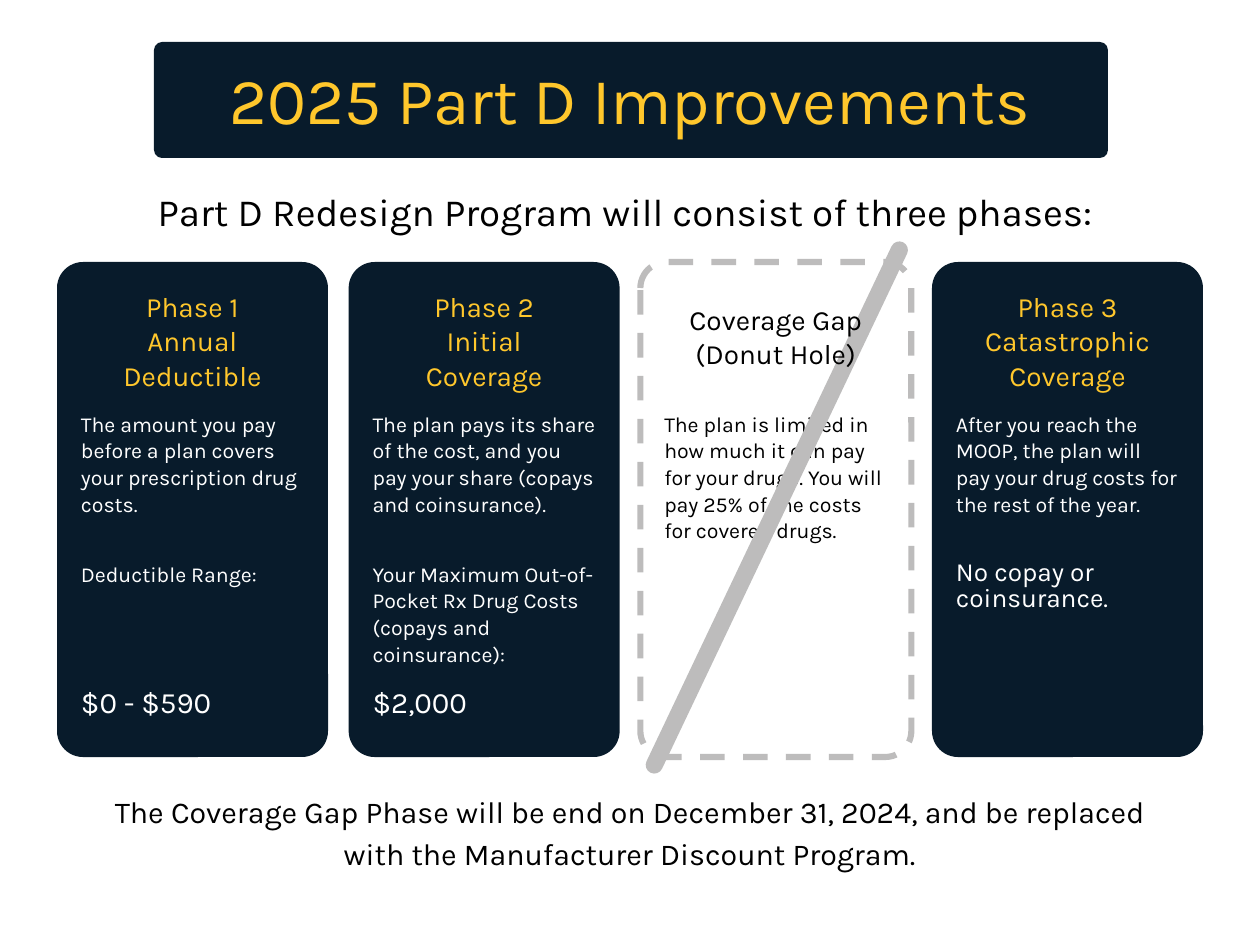
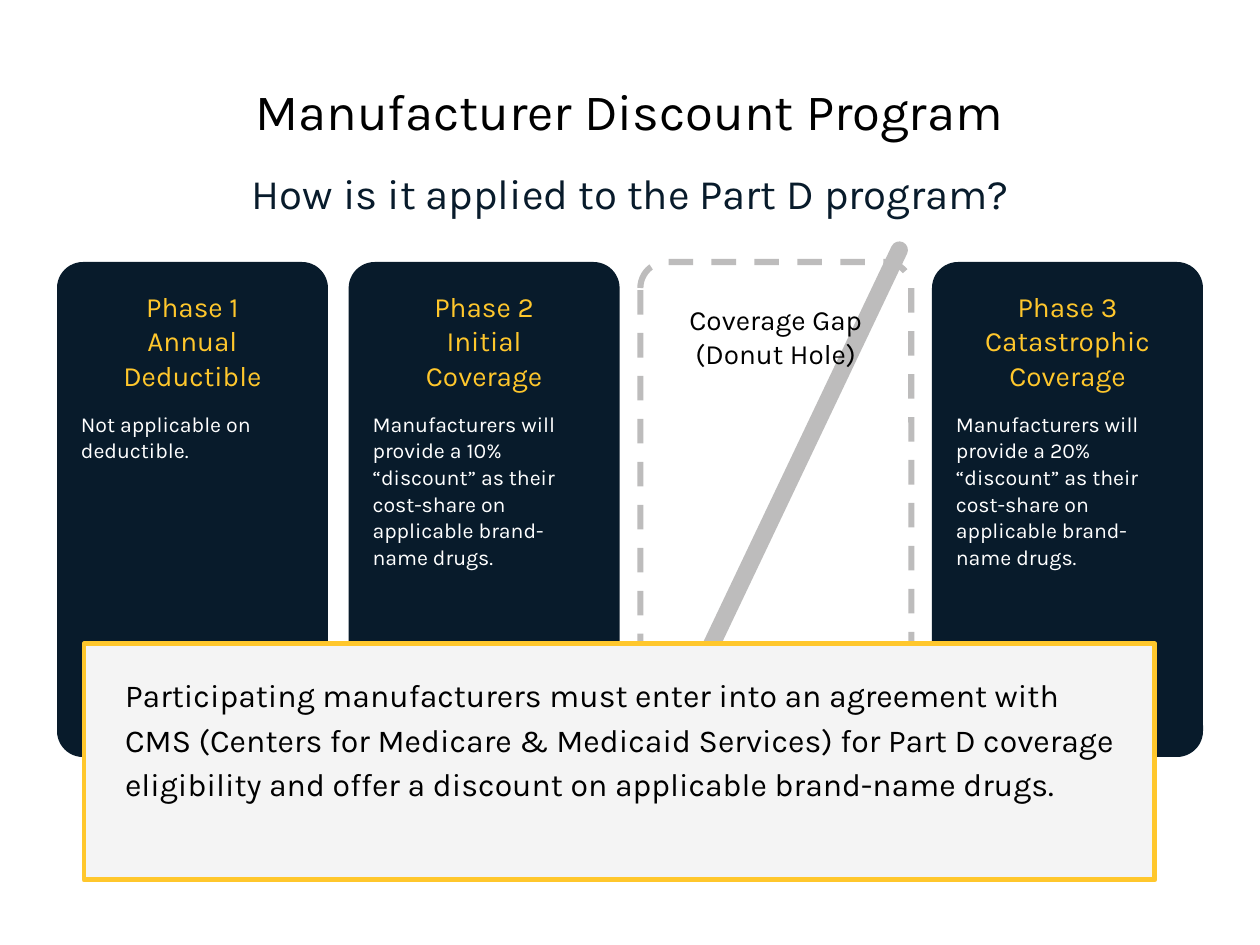
from dataclasses import dataclass

import pptx
import pptx.dml.color
import pptx.enum.dml
import pptx.enum.shapes
import pptx.enum.text
import pptx.oxml.ns
import pptx.util
from lxml import etree

SHAPE = pptx.enum.shapes.MSO_SHAPE
ALIGN = pptx.enum.text.PP_ALIGN


def px(length):
    return pptx.util.Emu(round(length * 7743))


def rgb(code):
    return pptx.dml.color.RGBColor.from_string(code)


@dataclass(frozen=True)
class Style:
    """Type size and exact line pitch in points, with colour and alignment."""
    size: float
    pitch: float
    color: str
    align: ALIGN = ALIGN.LEFT


class Theme:
    font = "Karla"
    navy, gold, gray, pale = "081B2B", "FFC72C", "BDBCBC", "F4F4F4"
    black, white = "000000", "FFFFFF"

    banner_title = Style(40, 56, gold, ALIGN.CENTER)
    plain_title = Style(31, 43.4, black, ALIGN.CENTER)
    intro = Style(23.5, 32.9, black, ALIGN.CENTER)
    question = Style(25.6, 32, navy, ALIGN.CENTER)
    closing = Style(18.5, 25.9, black, ALIGN.CENTER)
    callout = Style(19.5, 27.3, black)
    phase_heading = Style(17, 21.2, gold, ALIGN.CENTER)
    gap_heading = Style(17, 21.2, black, ALIGN.CENTER)
    phase_body = Style(13, 16.2, white)
    gap_body = Style(13, 16.2, black)
    remark = Style(16, 16.2, white)
    amount = Style(18, 16.2, white)


@dataclass(frozen=True)
class Box:
    left: float
    top: float
    width: float
    height: float

    def inner(self, left, top, width, height):
        return Box(self.left + left, self.top + top, width, height)

    def emu(self):
        return [px(v) for v in (self.left, self.top, self.width, self.height)]


CARD_ROW = Box(57, 262, 1146, 495)
CARD_WIDTH = 271
CARD_INSET = 24
TEXT_WIDTH = CARD_WIDTH - 2 * CARD_INSET
GAP_COLUMN = 2

# Column, heading lines, and how far the heading reaches past the card inset
PHASES = [
    (0, ["Phase 1", "Annual Deductible"], 0),
    (1, ["Phase 2", "Initial", "Coverage"], 0),
    (3, ["Phase 3", "Catastrophic Coverage"], 12),
]


def write(frame, lines, style, margins=(0, 0, 0, 0)):
    frame.word_wrap = True
    frame.auto_size = pptx.enum.text.MSO_AUTO_SIZE.NONE
    frame.vertical_anchor = pptx.enum.text.MSO_ANCHOR.TOP
    (frame.margin_left, frame.margin_top,
     frame.margin_right, frame.margin_bottom) = map(px, margins)
    for number, line in enumerate(lines):
        para = frame.add_paragraph() if number else frame.paragraphs[0]
        para.text = line
        format_paragraph(para, style)


def format_paragraph(para, style, before=0):
    para.alignment = style.align
    para.line_spacing = pptx.util.Pt(style.pitch)
    para.space_before = pptx.util.Pt(before)
    para.font.name = Theme.font
    para.font.size = pptx.util.Pt(style.size)
    para.font.color.rgb = rgb(style.color)


def add_text(page, box, lines, style):
    frame = page.shapes.add_textbox(*box.emu()).text_frame
    write(frame, lines, style)
    return frame


def add_panel(page, box, fill=None, line=None, width=0, radius=None):
    """Draw a rectangle, rounded when a radius is given."""
    kind = SHAPE.RECTANGLE if radius is None else SHAPE.ROUNDED_RECTANGLE
    panel = page.shapes.add_shape(kind, *box.emu())
    panel.shadow.inherit = False
    if radius is not None:
        panel.adjustments[0] = radius / min(box.width, box.height)
    if fill:
        panel.fill.solid()
        panel.fill.fore_color.rgb = rgb(fill)
    else:
        panel.fill.background()
    if line:
        panel.line.color.rgb = rgb(line)
        panel.line.width = pptx.util.Pt(width)
    else:
        panel.line.fill.background()
    return panel


def fill_placeholder(placeholder, box, text, style):
    (placeholder.left, placeholder.top,
     placeholder.width, placeholder.height) = box.emu()
    write(placeholder.text_frame, [text], style)


def add_page(deck, title, subtitle):
    """Add a page; title and subtitle are (box, text, style)."""
    page = deck.slides.add_slide(deck.slide_layouts[0])
    fill_placeholder(page.shapes.title, *title)
    fill_placeholder(page.placeholders[1], *subtitle)
    return page


def card_box(column):
    step = (CARD_ROW.width - CARD_WIDTH) / 3
    return CARD_ROW.inner(column * step, 0, CARD_WIDTH, CARD_ROW.height)


def add_card_body(page, card, text, style):
    add_text(page, card.inner(CARD_INSET, 148, TEXT_WIDTH, 156), [text], style)


def add_card_detail(page, card, text, style):
    box = card.inner(CARD_INSET, 298, TEXT_WIDTH, 160)
    return add_text(page, box, [text], style)


def add_amount(frame, amount, before):
    para = frame.add_paragraph()
    para.text = amount
    format_paragraph(para, Theme.amount, before)


def add_phase_cards(page, bodies):
    for (column, heading, reach), body in zip(PHASES, bodies):
        card = card_box(column)
        add_panel(page, card, fill=Theme.navy, radius=26)
        box = card.inner(CARD_INSET - reach, 26, TEXT_WIDTH + 2 * reach, 103)
        add_text(page, box, heading, Theme.phase_heading)
        add_card_body(page, card, body, Theme.phase_body)


def add_gap_card(page, body=None):
    """Dashed card for the dropped phase, struck through diagonally."""
    card = card_box(GAP_COLUMN)
    outline = add_panel(page, card, line=Theme.gray, width=3.75, radius=26)
    outline.line.dash_style = pptx.enum.dml.MSO_LINE.DASH
    if body:
        add_card_body(page, card, body, Theme.gap_body)
    strike = page.shapes.add_connector(
        pptx.enum.shapes.MSO_CONNECTOR.STRAIGHT,
        px(card.left + 14), px(card.top + 503),
        px(card.left + 259), px(card.top - 12))
    strike.line.color.rgb = rgb(Theme.gray)
    strike.line.width = pptx.util.Pt(10.5)
    strike.line._get_or_add_ln().set("cap", "rnd")
    etree.SubElement(strike._element.spPr, pptx.oxml.ns.qn("a:effectLst"))
    add_text(page, card.inner(CARD_INSET, 39, TEXT_WIDTH, 69),
             ["Coverage Gap", "(Donut Hole)"], Theme.gap_heading)


def build_improvements(deck):
    page = add_page(
        deck,
        (Box(118, 46, 1024, 87), "2025 Part D Improvements",
         Theme.banner_title),
        (Box(90, 180, 1071, 50),
         "Part D Redesign Program will consist of three phases:", Theme.intro))
    banner = add_panel(page, Box(154, 42, 954, 116), Theme.navy, radius=8)
    page.shapes.title._element.addprevious(banner._element)

    add_phase_cards(page, [
        "The amount you pay before a plan covers your prescription drug "
        "costs.",
        "The plan pays its share of the cost, and you pay your share "
        "(copays and coinsurance).",
        "After you reach the MOOP, the plan will pay your drug costs for "
        "the rest of the year.",
    ])
    deductible = add_card_detail(page, card_box(0), "Deductible Range:",
                                 Theme.phase_body)
    add_amount(deductible, "$0 - $590", before=64.8)
    maximum = add_card_detail(
        page, card_box(1),
        "Your Maximum Out-of-Pocket Rx Drug Costs (copays and coinsurance):",
        Theme.phase_body)
    add_amount(maximum, "$2,000", before=16.2)
    add_card_detail(page, card_box(3), "No copay or coinsurance.",
                    Theme.remark)
    add_gap_card(
        page,
        "The plan is limited in how much it can pay for your drugs. You will "
        "pay 25% of the costs for covered drugs.")
    add_text(page, Box(94, 787, 1071, 81), [
        "The Coverage Gap Phase will be end on December 31, 2024, and be "
        "replaced with the Manufacturer Discount Program."], Theme.closing)


def build_discount_program(deck):
    page = add_page(
        deck,
        (Box(74, 69, 1110, 67), "Manufacturer Discount Program",
         Theme.plain_title),
        (Box(174, 165, 913, 51), "How is it applied to the Part D program?",
         Theme.question))
    discount = ("Manufacturers will provide a {} “discount” as their "
                "cost-share on applicable brand-name drugs.")
    add_phase_cards(page, ["Not applicable on deductible.",
                           discount.format("10%"), discount.format("20%")])
    add_gap_card(page)
    callout = add_panel(page, Box(84, 644, 1071, 236), Theme.pale,
                        Theme.gold, 3)
    write(callout.text_frame, [
        "Participating manufacturers must enter into an agreement with CMS "
        "(Centers for Medicare & Medicaid Services) for Part D coverage "
        "eligibility and offer a discount on applicable brand-name drugs."],
        Theme.callout, margins=(41, 25, 28, 0))


def main():
    deck = pptx.Presentation()
    deck.slide_width, deck.slide_height = px(1260), px(945)
    build_improvements(deck)
    build_discount_program(deck)
    deck.save("out.pptx")


if __name__ == "__main__":
    main()
